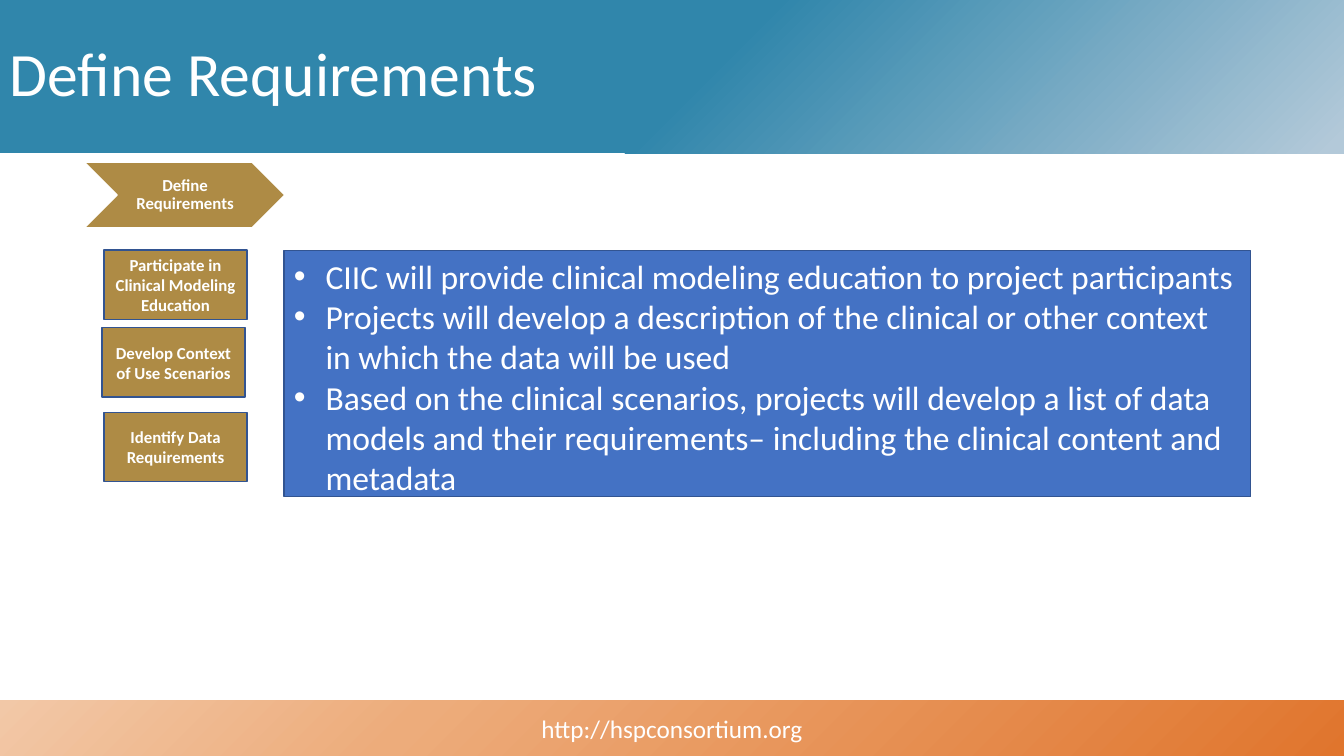
from pptx import Presentation
from pptx.dml.color import RGBColor
from pptx.enum.shapes import MSO_SHAPE
from pptx.enum.text import MSO_ANCHOR, PP_ALIGN
from pptx.oxml import parse_xml
from pptx.oxml.ns import nsdecls
from pptx.util import Cm, Pt

RECT, CHEVRON = MSO_SHAPE.RECTANGLE, MSO_SHAPE.CHEVRON
TOP, MIDDLE = MSO_ANCHOR.TOP, MSO_ANCHOR.MIDDLE
LEFT, CENTER = PP_ALIGN.LEFT, PP_ALIGN.CENTER
WHITE = RGBColor(0xFF, 0xFF, 0xFF)
GOLD = RGBColor(0xAE, 0x8B, 0x45)
BLUE = RGBColor(0x44, 0x72, 0xC4)
NAVY = RGBColor(0x32, 0x54, 0x91)
SKY = RGBColor(0xB3, 0xC9, 0xD9)
TEAL = RGBColor(0x30, 0x86, 0xAB)
RUST = RGBColor(0xE0, 0x75, 0x2D)
PEACH = RGBColor(0xED, 0xAC, 0x7B)
CREAM = RGBColor(0xF2, 0xC8, 0xA7)

FONT = "Calibri"
WIDE, HIGH = 33.87, 19.05
TITLE = "Define Requirements"
SITE = "http://hspconsortium.org"
PHASE = "Define Requirements"
STEPS = [
    (2.62, 6.3, "Participate in Clinical Modeling Education"),
    (2.57, 8.26, "Develop Context of Use Scenarios"),
    (2.62, 10.39, "Identify Data Requirements"),
]
POINTS = [
    "CIIC will provide clinical modeling education to project participants",
    "Projects will develop a description of the clinical or other context "
    "in which the data will be used",
    "Based on the clinical scenarios, projects will develop a list of data "
    "models and their requirements– including the clinical content and metadata",
]
HEAD_STOPS = [(1, SKY), (48, TEAL), (97, TEAL)]
FOOT_STOPS = [(0, RUST), (69, PEACH), (100, CREAM)]

deck = Presentation()
deck.slide_width, deck.slide_height = Cm(WIDE), Cm(HIGH)
slide = deck.slides.add_slide(deck.slide_layouts[6])


def add_box(kind, area, fill=None, edge=None):
    box = slide.shapes.add_shape(kind, *map(Cm, area))
    box.shadow.inherit = False
    if fill is not None:
        box.fill.solid()
        box.fill.fore_color.rgb = fill
    if edge is None:
        box.line.fill.background()
    else:
        box.line.color.rgb = edge
        box.line.width = Pt(1)
    return box


def add_band(top, tall, stops):
    band = add_box(RECT, (0, top, WIDE, tall))
    marks = "".join(
        f'<a:gs pos="{pos * 1000}"><a:srgbClr val="{tint}"/></a:gs>'
        for pos, tint in stops)
    band.fill.background()
    props = band.element.spPr
    blank = props.find("{*}noFill")
    props.replace(blank, parse_xml(
        f'<a:gradFill {nsdecls("a")} rotWithShape="1"><a:gsLst>{marks}</a:gsLst>'
        '<a:path path="circle"><a:fillToRect l="100000" t="100000"/></a:path>'
        '</a:gradFill>'))
    return band


def add_bullet(para):
    props = para._p.get_or_add_pPr()
    props.set("marL", "285750")
    props.set("indent", "-285750")
    for tag in ('buFont {} typeface="Arial"', 'buChar {} char="•"'):
        props.append(parse_xml(f'<a:{tag.format(nsdecls("a"))}/>'))


def write(box, lines, size, align=CENTER, anchor=MIDDLE, bold=False,
          space=None, bullet=False):
    frame = box.text_frame
    frame.word_wrap = True
    frame.vertical_anchor = anchor
    for num, line in enumerate(lines):
        para = frame.add_paragraph() if num else frame.paragraphs[0]
        if bullet:
            add_bullet(para)
        para.alignment = align
        if space:
            para.line_spacing = space
        run = para.add_run()
        run.text = line
        font = run.font
        font.name, font.size, font.bold = FONT, Pt(size), bold
        font.color.rgb = WHITE


def add_label(area):
    return slide.shapes.add_textbox(*map(Cm, area))


add_band(0, 3.86, HEAD_STOPS)
write(add_band(17.65, 1.4, FOOT_STOPS), [SITE], 18)
write(add_label((0, 0.1, WIDE, 3.68)), [TITLE], 44, align=LEFT, space=0.9)

for left, top, text in STEPS:
    step = add_box(RECT, (left, top, 3.61, 1.75), GOLD, NAVY)
    write(step, [text], 12, bold=True)

add_box(CHEVRON, (2.13, 4.09, 5.05, 1.65), GOLD, WHITE)
label = add_label((3.12, 4.09, 3.02, 1.65))
frame = label.text_frame
frame.margin_left = Cm(0.1)
frame.margin_right = frame.margin_top = frame.margin_bottom = Cm(0.03)
write(label, [PHASE], 12, bold=True, space=0.9)

body = add_box(RECT, (7.16, 6.32, 24.36, 6.2), BLUE, NAVY)
write(body, POINTS, 24, align=LEFT, anchor=TOP, bullet=True)

deck.save("out.pptx")
